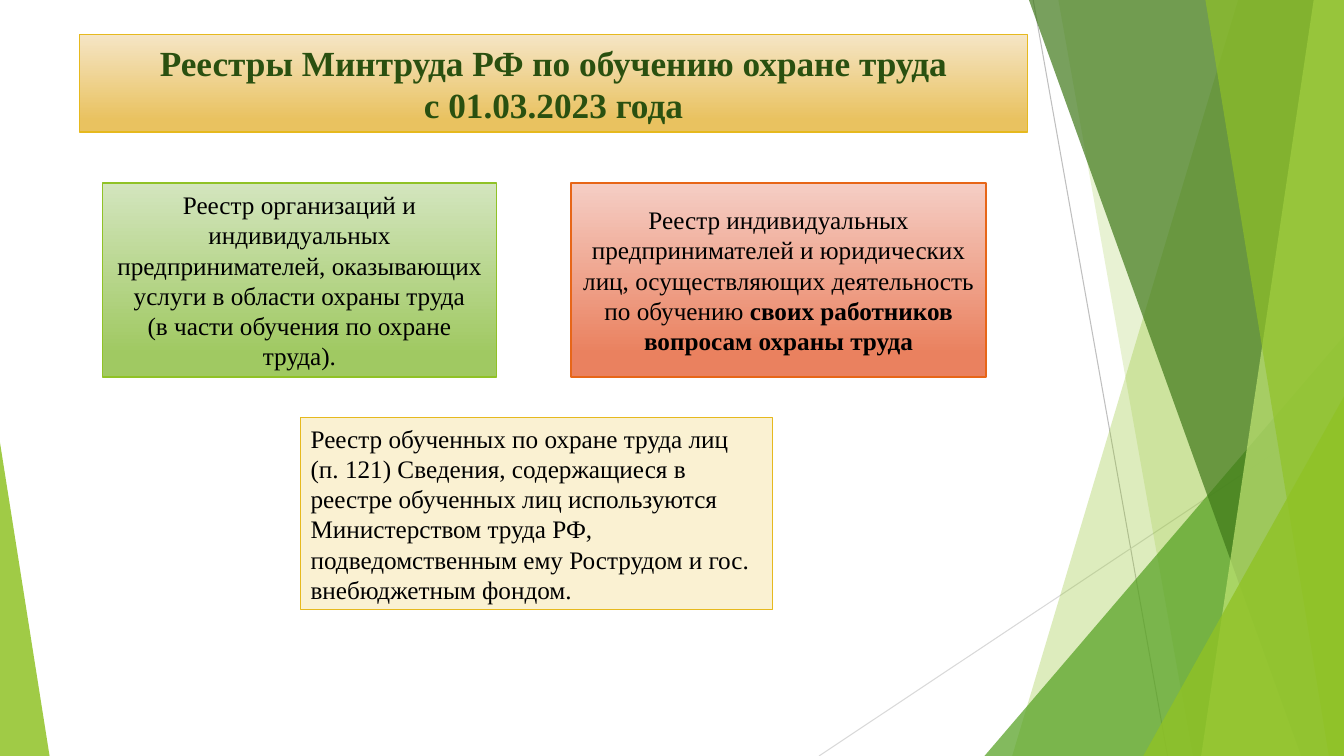
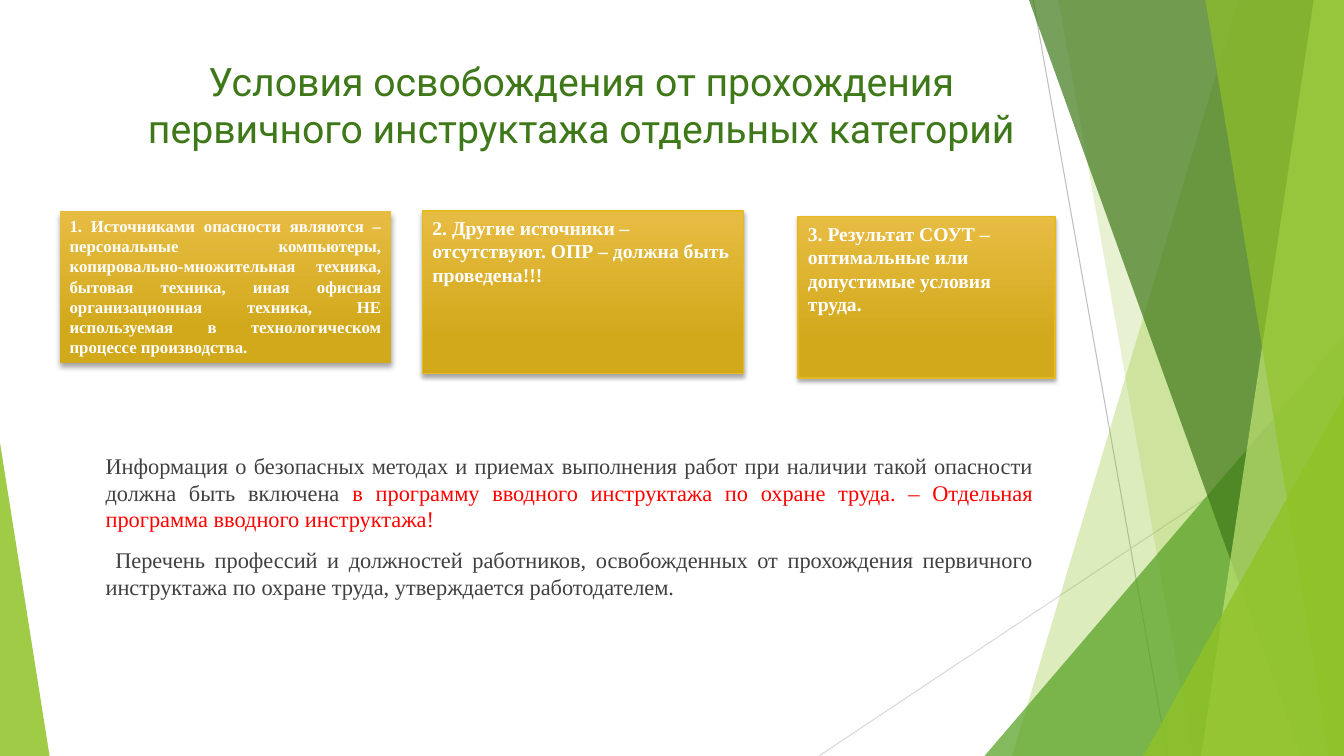
from dataclasses import dataclass

from lxml.etree import SubElement
from pptx import Presentation
from pptx.dml.color import RGBColor
from pptx.enum.shapes import MSO_CONNECTOR as Connector, MSO_SHAPE as Preset
from pptx.enum.text import MSO_ANCHOR as Anchor, PP_ALIGN as Align
from pptx.oxml.ns import qn
from pptx.util import Emu, Inches, Pt

COLUMNS, ROWS = 160, 90
CELL = Inches(7.5) / ROWS
BLANK = 6


@dataclass(frozen=True)
class Theme:
    serif: str = "Times New Roman"
    sans: str = "Roboto"
    banner_size: float = 25.2
    title_size: float = 28
    box_size: float = 18
    body_size: float = 16
    card_size: float = 14
    small_size: float = 12
    hairline: float = 0.75
    outline: float = 1
    black: str = "000000"
    white: str = "FFFFFF"
    grey: str = "404040"
    red: str = "FF0000"
    line_dark: str = "BFBFBF"
    line_light: str = "D9D9D9"
    lime: str = "90C226"
    pale_lime: str = "C0E474"
    green: str = "54A021"
    dark_green: str = "3F7819"
    title_green: str = "2A5010"
    gold: str = "E6B91E"
    orange: str = "E76618"
    cream: str = "FAF1D2"
    # Gradients: top colour, bottom colour, share of the height where it ends
    sand_fade: tuple = ("F5E5C5", "E9C260", 0.88)
    green_fade: tuple = ("D3E5BE", "A0C962", 0.88)
    red_fade: tuple = ("F5CEC5", "EA815F", 0.88)
    gold_fade: tuple = ("E7BC43", "D2A91B", 0.78)


THEME = Theme()


def cells(*counts):
    return [Emu(round(count * CELL)) for count in counts]


def rgb(code):
    return RGBColor.from_string(code)


def paint(shape, fill, line=None):
    """Fill with one colour, or with a vertical gradient when given a tuple."""
    shape.shadow.inherit = False
    if isinstance(fill, tuple):
        top, bottom, end = fill
        shape.fill.gradient()
        shape.fill.gradient_angle = 270
        for stop, code, position in zip(shape.fill.gradient_stops, (top, bottom), (0, end)):
            stop.color.rgb = rgb(code)
            stop.position = position
    else:
        shape.fill.solid()
        shape.fill.fore_color.rgb = rgb(fill)
    if line:
        shape.line.color.rgb = rgb(line)
        shape.line.width = Pt(THEME.outline)
    else:
        shape.line.fill.background()


def set_opacity(shape, percent):
    color = shape.element.spPr.find(f"{qn('a:solidFill')}/{qn('a:srgbClr')}")
    SubElement(color, qn("a:alpha"), val=str(percent * 1000))


def cast_shadow(shape, blur, distance):
    effects = shape.element.spPr.find(qn("a:effectLst"))
    shadow = SubElement(effects, qn("a:outerShdw"), blurRad=str(Pt(blur)),
                        dist=str(Pt(distance)), dir="5400000", algn="ctr", rotWithShape="0")
    color = SubElement(shadow, qn("a:srgbClr"), val=THEME.black)
    SubElement(color, qn("a:alpha"), val="35000")


def write(box, paragraphs, size, color, align=Align.LEFT, anchor=Anchor.TOP,
          font=THEME.serif, bold=False, space=0):
    """Write paragraphs, each a string or a (plain text, marked text, mark) tuple.

    The mark is a colour for the marked text, or None to make it bold.
    """
    frame = box.text_frame
    frame.word_wrap = True
    frame.vertical_anchor = anchor
    for index, content in enumerate(paragraphs):
        para = frame.add_paragraph() if index else frame.paragraphs[0]
        plain, marked, mark = content if isinstance(content, tuple) else (content, "", None)
        para.text = plain
        para.alignment = align
        para.space_before = Pt(space)
        if marked:
            para.add_run().text = marked
        for span in para.runs:
            span.font.name = font
            span.font.size = Pt(size)
            span.font.bold = bold
            span.font.color.rgb = rgb(color)
        if marked and mark:
            para.runs[-1].font.color.rgb = rgb(mark)
        elif marked:
            para.runs[-1].font.bold = True


def add_box(page, area, fill, line=None):
    box = page.shapes.add_shape(Preset.RECTANGLE, *cells(*area))
    paint(box, fill, line)
    return box


def add_text(page, area, *content, **style):
    write(page.shapes.add_textbox(*cells(*area)), *content, **style)


def add_hairline(page, ends, color):
    line = page.shapes.add_connector(Connector.STRAIGHT, *cells(*ends))
    line.line.color.rgb = rgb(color)
    line.line.width = Pt(THEME.hairline)
    SubElement(line.element.spPr, qn("a:effectLst"))


def add_band(page, top, bottom, color, opacity):
    """Add a band from a slanted left edge to the right side of the slide."""
    builder = page.shapes.build_freeform(*cells(top, 0), scale=1.0)
    corners = [(COLUMNS, 0), (COLUMNS, ROWS), (bottom, ROWS)]
    builder.add_line_segments([cells(*corner) for corner in corners], close=True)
    band = builder.convert_to_shape()
    paint(band, color)
    set_opacity(band, opacity)


def add_wedge(page, left, right, top, peak, color, opacity):
    """Add a triangle standing on the slide's foot, its peak at 0 (left) to 1 (right)."""
    wedge = page.shapes.add_shape(
        Preset.ISOSCELES_TRIANGLE, *cells(left, top, right - left, ROWS - top))
    wedge.adjustments[0] = peak
    paint(wedge, color)
    set_opacity(wedge, opacity)


def add_page(deck):
    """Add a blank slide with the shared green facets."""
    page = deck.slides.add_slide(deck.slide_layouts[BLANK])
    add_hairline(page, (123, 0, 139, ROWS), THEME.line_dark)
    add_hairline(page, (COLUMNS, 48.4, 97.5, ROWS), THEME.line_light)
    add_band(page, 147.4, 120.5, THEME.lime, 30)
    add_band(page, 126, 142, THEME.lime, 20)
    add_wedge(page, 117.2, COLUMNS, 40, 1, THEME.green, 72)
    add_band(page, 122.5, 154.9, THEME.dark_green, 70)
    add_band(page, 156.4, 143, THEME.pale_lime, 70)
    add_band(page, 143.5, 158.2, THEME.lime, 65)
    add_wedge(page, 136.1, COLUMNS, 47.2, 1, THEME.lime, 80)
    add_wedge(page, 0, 5.9, 52.7, 0, THEME.lime, 85)
    return page


def build_registers(deck):
    page = add_page(deck)
    banner = add_box(page, (9.5, 4.1, 112.8, 11.6), THEME.sand_fade, THEME.gold)
    write(banner, ["Реестры Минтруда РФ по обучению охране труда\vс 01.03.2023 года"],
          THEME.banner_size, THEME.title_green, Align.CENTER, Anchor.MIDDLE, bold=True)

    registers = [
        ((12.2, 21.8, 46.9, 23.1), THEME.green_fade, THEME.lime, Align.CENTER,
         ["Реестр организаций и индивидуальных предпринимателей, оказывающих "
          "услуги в области охраны труда",
          "(в части обучения по охране труда)."]),
        ((68, 21.8, 49.4, 23.1), THEME.red_fade, THEME.orange, Align.CENTER,
         [("Реестр индивидуальных предпринимателей и юридических лиц, "
           "осуществляющих деятельность по обучению ",
           "своих работников вопросам охраны труда", None)]),
        ((35.8, 49.7, 56.2, 22.9), THEME.cream, THEME.gold, Align.LEFT,
         ["Реестр обученных по охране труда лиц (п. 121) Сведения, содержащиеся "
          "в реестре обученных лиц используются Министерством труда РФ, "
          "подведомственным ему Рострудом и гос. внебюджетным фондом."]),
    ]
    for area, fill, line, align, paragraphs in registers:
        write(add_box(page, area, fill, line), paragraphs, THEME.box_size, THEME.black,
              align, Anchor.MIDDLE)


def build_exemptions(deck):
    page = add_page(deck)
    add_text(page, (12.8, 6.2, 112.8, 18.1),
             ["Условия освобождения от прохождения первичного инструктажа отдельных категорий"],
             THEME.title_size, THEME.dark_green, align=Align.CENTER, font=THEME.sans)
    add_text(page, (11.4, 53.2, 112.8, 22.3), [
        ("Информация о безопасных методах и приемах выполнения работ при наличии "
         "такой опасности должна быть включена ",
         "в программу вводного инструктажа по охране труда. – Отдельная программа "
         "вводного инструктажа!", THEME.red),
        " Перечень профессий и должностей работников, освобожденных от прохождения "
        "первичного инструктажа по охране труда, утверждается работодателем.",
    ], THEME.body_size, THEME.grey, align=Align.JUSTIFY, space=10)

    cards = [
        ((7.1, 25.1, 39.5, 18.1), None, (4, 3), THEME.small_size, Align.JUSTIFY,
         "1. Источниками опасности являются – персональные компьютеры, "
         "копировально-множительная техника, бытовая техника, иная офисная "
         "организационная техника, НЕ используемая в технологическом процессе "
         "производства."),
        ((50.3, 25.1, 38.2, 19.4), THEME.gold, (3, 2), THEME.card_size, Align.LEFT,
         "2. Другие источники – отсутствуют. ОПР – должна быть проведена!!!"),
        ((95, 25.8, 30.6, 19.2), THEME.gold, (3, 2), THEME.card_size, Align.LEFT,
         "3. Результат СОУТ – оптимальные или допустимые условия труда."),
    ]
    for area, line, shadow, size, align, text in cards:
        card = add_box(page, area, THEME.gold_fade, line)
        cast_shadow(card, *shadow)
        write(card, [text], size, THEME.white, align, bold=True)


def main():
    deck = Presentation()
    deck.slide_width, deck.slide_height = cells(COLUMNS, ROWS)
    build_registers(deck)
    build_exemptions(deck)
    deck.save("out.pptx")


if __name__ == "__main__":
    main()
